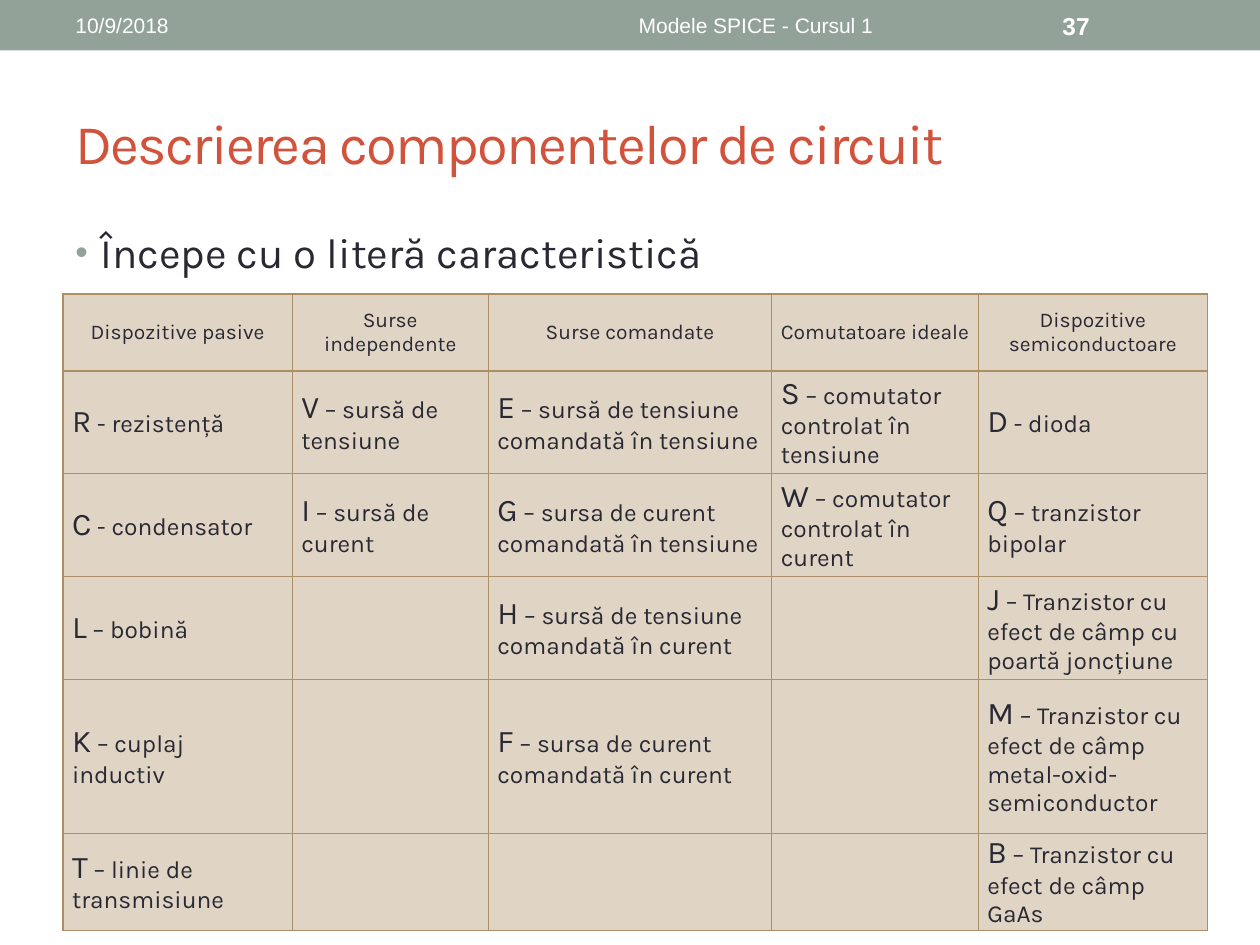
import dataclasses
import pptx
import pptx.dml.color
import pptx.enum.shapes
import pptx.enum.text
import pptx.oxml
import pptx.oxml.ns
import pptx.util

Pt = pptx.util.Pt
ALIGN = pptx.enum.text.PP_ALIGN
MIDDLE = pptx.enum.text.MSO_ANCHOR.MIDDLE
TOP = pptx.enum.text.MSO_ANCHOR.TOP


@dataclasses.dataclass(frozen=True)
class Theme:
    sage: str = "93A299"
    red: str = "D2533C"
    ink: str = "292934"
    white: str = "FFFFFF"
    sand: str = "E0D4C5"
    brown: str = "AD8F67"
    face: str = "Karla"
    plain: str = "Arial"
    title: int = 32
    body: int = 24
    letter: int = 18
    cell: int = 14
    page: int = 14
    small: int = 12


def color(code):
    return pptx.dml.color.RGBColor.from_string(code)


def add_xml(parent, tag, inner="", **attrs):
    listed = " ".join(f'{key}="{value}"' for key, value in attrs.items())
    space = pptx.oxml.ns.nsdecls("a")
    parent.append(pptx.oxml.parse_xml(f"<a:{tag} {space} {listed}>{inner}</a:{tag}>"))


def fill_xml(code):
    return f'<a:solidFill><a:srgbClr val="{code}"/></a:solidFill>'


def write(par, text, *, size, tint, face, bold=False, track=None, align=ALIGN.LEFT):
    """Append a run; track is letter spacing in hundredths of a point."""
    par.alignment = align
    run = par.add_run()
    run.text = text
    run.font.size, run.font.name, run.font.bold = Pt(size), face, bold
    run.font.color.rgb = color(tint)
    if track is not None:
        run.font._element.set("spc", str(track))


class Page:
    def __init__(self, deck, theme):
        self.theme = theme
        self.slide = deck.slides.add_slide(deck.slide_layouts[5])

    def band(self, left, top, width, height):
        kind = pptx.enum.shapes.MSO_SHAPE.RECTANGLE
        shape = self.slide.shapes.add_shape(kind, *map(Pt, (left, top, width, height)))
        shape.shadow.inherit = False
        shape.fill.solid()
        shape.fill.fore_color.rgb = color(self.theme.sage)
        shape.line.fill.background()

    def title(self, text, left, top, width, height):
        shape = self.slide.shapes.title
        shape.left, shape.top, shape.width, shape.height = map(Pt, (left, top, width, height))
        frame = shape.text_frame
        frame.vertical_anchor, frame.word_wrap = MIDDLE, True
        frame.auto_size = pptx.enum.text.MSO_AUTO_SIZE.NONE
        write(frame.paragraphs[0], text, size=self.theme.title, tint=self.theme.red,
              face=self.theme.face, track=-100)

    def text(self, text, left, top, width, height, anchor=MIDDLE, **style):
        box = self.slide.shapes.add_textbox(*map(Pt, (left, top, width, height)))
        frame = box.text_frame
        frame.word_wrap, frame.vertical_anchor = True, anchor
        write(frame.paragraphs[0], text, **style)
        return frame.paragraphs[0]

    def bullet(self, text, left, top, width, height):
        look = self.theme
        par = self.text(text, left, top, width, height, TOP,
                        size=look.body, tint=look.ink, face=look.face)
        par.space_before = Pt(0.2 * look.body)
        props = par._p.get_or_add_pPr()
        indent = Pt(14.4)
        props.set("marL", str(indent))
        props.set("indent", str(-indent))
        add_xml(props, "buClr", f'<a:srgbClr val="{look.sage}"/>')
        add_xml(props, "buSzPct", val=85000)
        add_xml(props, "buFont", typeface=look.plain)
        add_xml(props, "buChar", char="•")

    def cell(self, cell):
        cell.vertical_anchor = MIDDLE
        cell.margin_left = cell.margin_right = Pt(5.2)
        cell.margin_top = cell.margin_bottom = 0
        for side in ("lnL", "lnR", "lnT", "lnB"):
            add_xml(cell._tc.get_or_add_tcPr(), side, fill_xml(self.theme.brown), w=Pt(0.75))
        cell.fill.solid()
        cell.fill.fore_color.rgb = color(self.theme.sand)

    def table(self, heads, rows, left, top, widths, heights):
        look = self.theme
        frame = self.slide.shapes.add_table(len(heights), len(widths), Pt(left), Pt(top),
                                            Pt(sum(widths)), Pt(sum(heights)))
        table = frame.table
        table.first_row = table.horz_banding = False
        for col, width in zip(table.columns, widths):
            col.width = Pt(width)
        for row, height in zip(table.rows, heights):
            row.height = Pt(height)
        for cell in table.iter_cells():
            self.cell(cell)
        style = dict(tint=look.ink, face=look.face)
        for at, head in enumerate(heads):
            write(table.cell(0, at).text_frame.paragraphs[0], head,
                  size=look.small, align=ALIGN.CENTER, **style)
        for line, row in enumerate(rows, 1):
            for at, entry in enumerate(row):
                if entry:
                    par = table.cell(line, at).text_frame.paragraphs[0]
                    write(par, entry[0], size=look.letter, **style)
                    write(par, entry[1:], size=look.cell, **style)


HEADS = ["Dispozitive pasive", "Surse independente", "Surse comandate",
         "Comutatoare ideale", "Dispozitive semiconductoare"]
# The first letter of each entry is set larger than the rest.
PARTS = [
    ["R - rezistență", "V – sursă de tensiune",
     "E – sursă de tensiune comandată în tensiune",
     "S – comutator controlat în tensiune", "D - dioda"],
    ["C - condensator", "I – sursă de curent",
     "G – sursa de curent comandată în tensiune",
     "W – comutator controlat în curent", "Q – tranzistor bipolar"],
    ["L – bobină", "", "H – sursă de tensiune comandată în curent", "",
     "J – Tranzistor cu efect de câmp cu poartă joncțiune"],
    ["K – cuplaj inductiv", "", "F – sursa de curent comandată în curent", "",
     "M – Tranzistor cu efect de câmp metal-oxid-semiconductor"],
    ["T – linie de transmisiune", "", "", "",
     "B – Tranzistor cu efect de câmp GaAs"],
]


def main():
    deck = pptx.Presentation()
    deck.slide_width, deck.slide_height = Pt(720), Pt(540)
    look = Theme()
    page = Page(deck, look)
    page.band(0, 0, 720, 28.8)
    page.title("Descrierea componentelor de circuit", 36, 42, 648, 78)
    page.bullet("Începe cu o literă caracteristică", 36, 126, 648, 384)
    light = dict(tint=look.white, face=look.plain)
    page.text("10/9/2018", 36, 1.5, 264, 26, size=look.small, **light)
    page.text("Modele SPICE - Cursul 1", 270, 1.5, 324, 26,
              size=look.small, align=ALIGN.CENTER, **light)
    page.text("37", 600, 1.5, 84, 26, size=look.page, bold=True, **light)
    page.table(HEADS, PARTS, 36, 168, [131, 112, 162, 118, 131],
               [44, 58.8, 58.8, 58.8, 88, 51])
    deck.save("out.pptx")


if __name__ == "__main__":
    main()
